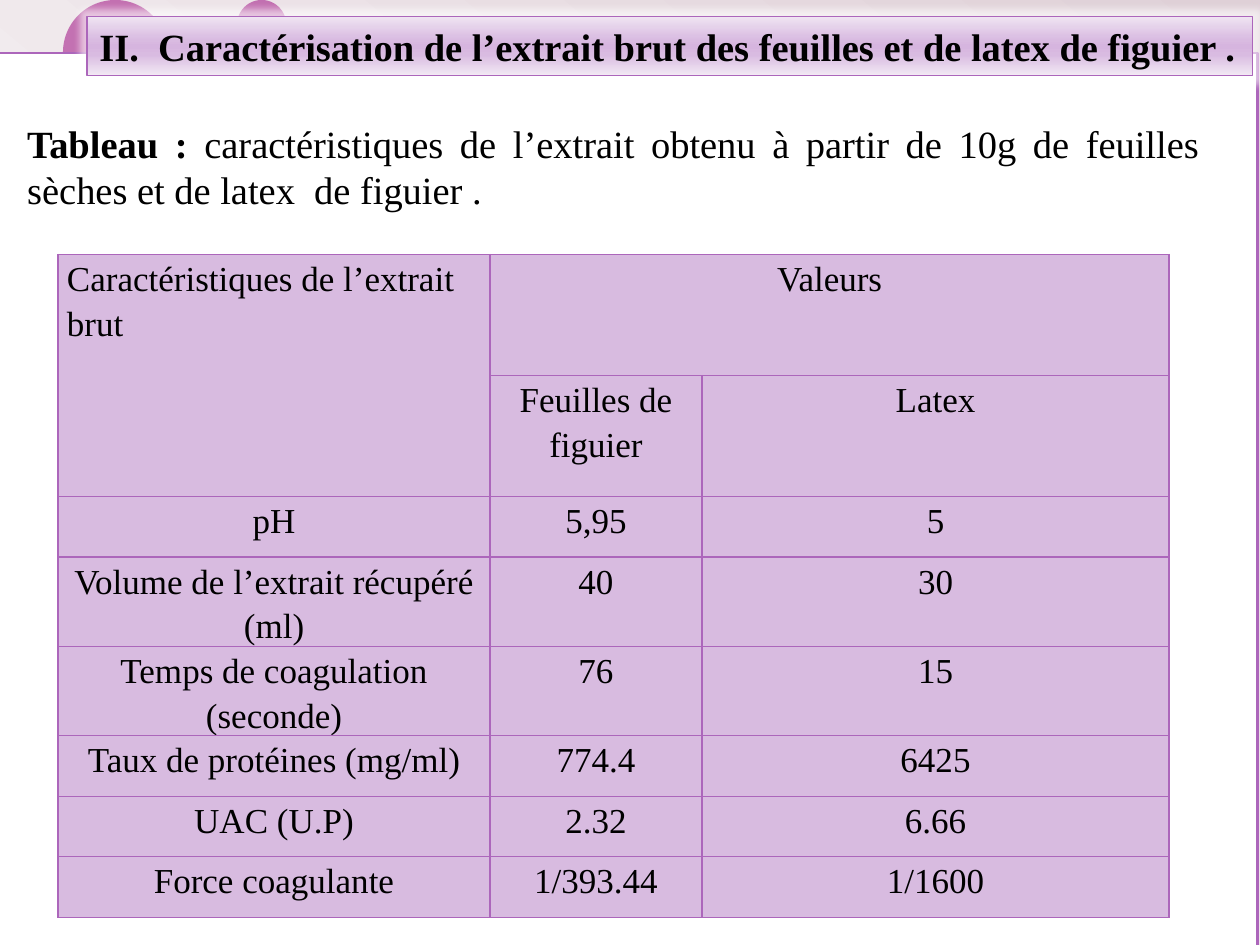
from lxml import etree
from pptx import Presentation
from pptx.dml.color import RGBColor
from pptx.enum.shapes import MSO_SHAPE as SHAPE
from pptx.enum.text import MSO_ANCHOR as ANCHOR, MSO_AUTO_SIZE as AUTOSIZE, PP_ALIGN as ALIGN
from pptx.oxml.ns import qn
from pptx.util import Cm, Pt

# Content
TITLE = "II.  Caractérisation de l’extrait brut des feuilles et de latex de figuier ."
CAPTION_LABEL = "Tableau : "
CAPTION = ("caractéristiques de l’extrait obtenu à partir de 10g de feuilles "
           "sèches et de latex  de figuier .")
ROWS = [
    ("Caractéristiques de l’extrait brut", "Valeurs", ""),
    ("", "Feuilles de figuier", "Latex"),
    ("pH", "5,95", "5"),
    ("Volume de l’extrait récupéré (ml)", "40", "30"),
    ("Temps de coagulation (seconde)", "76", "15"),
    ("Taux de protéines (mg/ml)", "774.4", "6425"),
    ("UAC (U.P)", "2.32", "6.66"),
    ("Force coagulante", "1/393.44", "1/1600"),
]
MERGES = [((0, 0), (1, 0)), ((0, 1), (0, 2))]

# Format
FONT = "Times New Roman"
COLORS = {"text": "000000", "line": "AC66BB", "cell": "D8BBE0",
          "page": "FFFFFF", "disc": "B13F9A"}
BACKGROUND = [(0, "DFD0D7", 100), (100, "FFFFFF", 100)]
BUBBLE = [(0, "E296A8", 60), (50, "EBC0C9", 60), (100, "F5E0E5", 60)]
BANNER = [(0, "EFE4F2", 100), (40, "D9BBE1", 100), (50, "D6B5DF", 100),
          (65, "D9BBE1", 100), (100, "F2E9F4", 100)]
# Circles: left, top, diameter in cm, and whether shaded as a bubble
CIRCLES = [(1.91, 0.43, 2.54, True), (1.27, 0, 2.11, False), (4.78, 0, 0.99, False),
           (4.65, 0.64, 1.19, True), (5.61, 0.84, 0.56, True)]
COL_WIDTHS = (8.71, 4.27, 9.42)
HEADER_HEIGHT, ROW_HEIGHT = 2.44, 1.22


def rgb(name):
    return RGBColor.from_string(COLORS[name])


def add_color(parent, color, alpha=100):
    clr = etree.SubElement(parent, qn("a:srgbClr"), val=color)
    if alpha < 100:
        etree.SubElement(clr, qn("a:alpha"), val=str(alpha * 1000))


def set_gradient(fill, element, stops, angle):
    fill.gradient()
    fill.gradient_angle = 360 - angle
    gs_list = element.find(".//" + qn("a:gsLst"))
    for old in list(gs_list):
        gs_list.remove(old)
    for pos, color, alpha in stops:
        add_color(etree.SubElement(gs_list, qn("a:gs"), pos=str(pos * 1000)), color, alpha)


def add_text(p, text, size=20, bold=False, align=ALIGN.CENTER, spacing=1.0):
    p.alignment, p.line_spacing = align, spacing
    r = p.add_run()
    r.text = text
    r.font.name, r.font.size, r.font.bold = FONT, Pt(size), bold
    r.font.color.rgb = rgb("text")


def add_plain(slide, kind, left, top, width, height):
    sp = slide.shapes.add_shape(kind, Cm(left), Cm(top), Cm(width), Cm(height))
    sp.shadow.inherit = False
    sp.line.fill.background()
    return sp


def set_line(sp, width):
    sp.line.color.rgb = rgb("line")
    sp.line.width = Pt(width)


def add_borders(cell):
    tc_pr = cell._tc.get_or_add_tcPr()
    for i, side in enumerate(("lnL", "lnR", "lnT", "lnB")):
        ln = etree.Element(qn("a:" + side), w=str(Pt(0.94)))
        add_color(etree.SubElement(ln, qn("a:solidFill")), COLORS["line"])
        tc_pr.insert(i, ln)


def add_decor(slide):
    set_gradient(slide.background.fill, slide.element, BACKGROUND, 130)
    for left, top, size, bubble in CIRCLES:
        sp = add_plain(slide, SHAPE.OVAL, left, top, size, size)
        if bubble:
            set_gradient(sp.fill, sp.element, BUBBLE, 90)
        else:
            sp.fill.solid()
            sp.fill.fore_color.rgb = rgb("disc")
            clr = sp.element.spPr.find(qn("a:solidFill"))[0]
            etree.SubElement(clr, qn("a:alpha"), val="70000")
    # White page with a thin border
    page = add_plain(slide, SHAPE.RECTANGLE, -0.05, 1.07, 25.4, 18.03)
    page.fill.solid()
    page.fill.fore_color.rgb = rgb("page")
    set_line(page, 1.5)


def add_table(slide):
    frame = slide.shapes.add_table(len(ROWS), len(COL_WIDTHS), Cm(1.17), Cm(5.13),
                                   Cm(sum(COL_WIDTHS)), Cm(ROW_HEIGHT * len(ROWS)))
    table = frame.table
    table.first_row = table.horz_banding = False
    for col, width in zip(table.columns, COL_WIDTHS):
        col.width = Cm(width)
    for start, end in MERGES:
        table.cell(*start).merge(table.cell(*end))
    for i, row in enumerate(ROWS):
        table.rows[i].height = Cm(HEADER_HEIGHT if i < 2 else ROW_HEIGHT)
        for j, text in enumerate(row):
            cell = table.cell(i, j)
            cell.margin_left = cell.margin_right = Cm(0.18)
            cell.margin_top = cell.margin_bottom = 0
            cell.fill.solid()
            cell.fill.fore_color.rgb = rgb("cell")
            add_borders(cell)
            if text:
                align = ALIGN.LEFT if i == j == 0 else ALIGN.CENTER
                add_text(cell.text_frame.paragraphs[0], text, align=align, spacing=1.15)


def add_title(slide):
    title = slide.shapes.title
    title.left, title.top, title.width, title.height = Cm(1.75), Cm(0.33), Cm(23.5), Cm(1.19)
    set_gradient(title.fill, title.element, BANNER, 90)
    set_line(title, 0.94)
    # White glow around the banner
    title_pr = title.element.spPr
    effects = etree.SubElement(title_pr, qn("a:effectLst"))
    add_color(etree.SubElement(effects, qn("a:glow"), rad=str(Cm(0.3))), COLORS["page"], 60)
    tf = title.text_frame
    tf.auto_size, tf.word_wrap = AUTOSIZE.NONE, False
    tf.vertical_anchor = ANCHOR.MIDDLE
    add_text(tf.paragraphs[0], TITLE, size=22, bold=True, align=ALIGN.LEFT)
    slide.shapes._spTree.append(title.element)  # bring to front


def add_caption(slide):
    box = slide.shapes.add_textbox(Cm(0.3), Cm(2.29), Cm(24.13), Cm(2.13))
    tf = box.text_frame
    tf.word_wrap, tf.vertical_anchor = True, ANCHOR.MIDDLE
    p = tf.paragraphs[0]
    add_text(p, CAPTION_LABEL, size=22, bold=True, align=ALIGN.JUSTIFY)
    add_text(p, CAPTION, size=22, align=ALIGN.JUSTIFY)


def main():
    prs = Presentation()
    prs.slide_width, prs.slide_height = Cm(25.4), Cm(19.05)
    slide = prs.slides.add_slide(prs.slide_layouts[5])
    add_decor(slide)
    add_table(slide)
    add_title(slide)
    add_caption(slide)
    prs.save("out.pptx")


if __name__ == "__main__":
    main()
